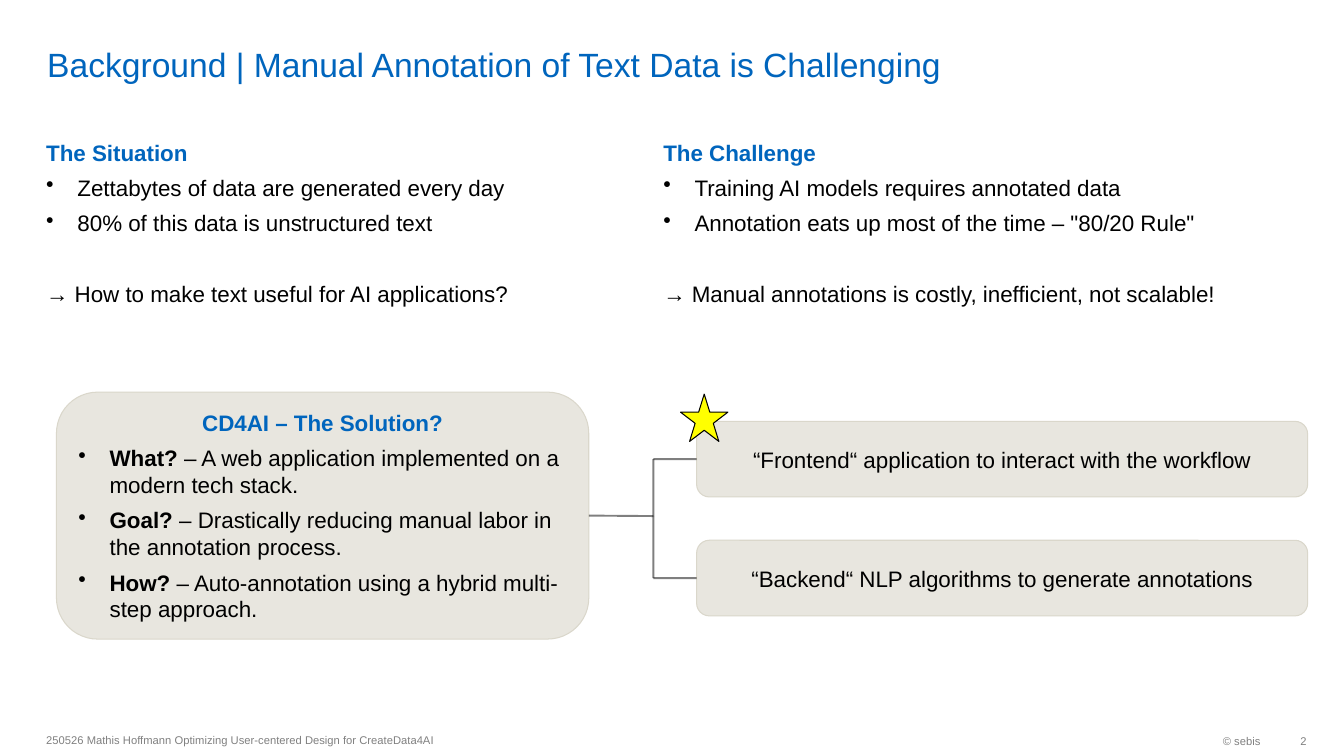
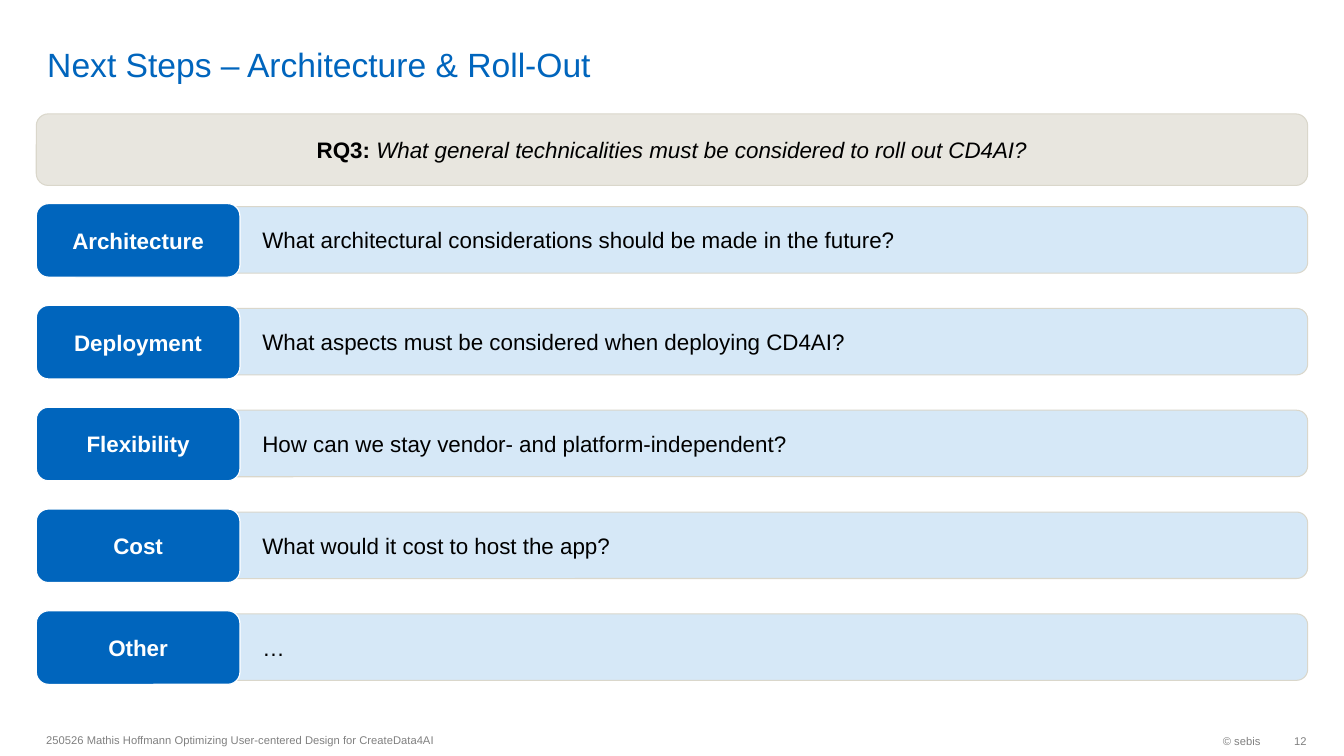
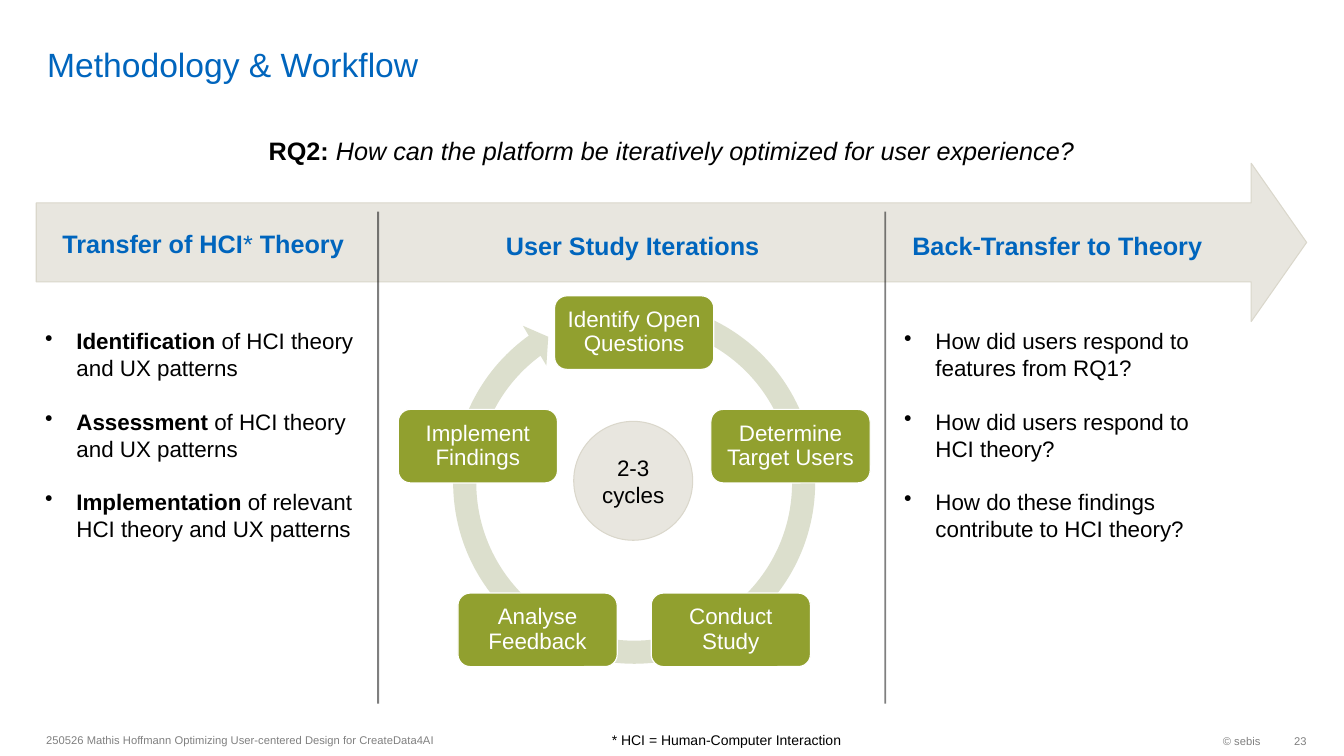
from dataclasses import dataclass
from math import cos, radians, sin

from lxml import etree
from pptx import Presentation
from pptx.dml.color import RGBColor
from pptx.enum.shapes import MSO_CONNECTOR, MSO_SHAPE
from pptx.enum.text import MSO_ANCHOR, PP_ALIGN
from pptx.oxml.ns import qn
from pptx.util import Inches, Pt

ROUNDED = MSO_SHAPE.ROUNDED_RECTANGLE
TOP, MIDDLE, BOTTOM = MSO_ANCHOR.TOP, MSO_ANCHOR.MIDDLE, MSO_ANCHOR.BOTTOM
LEFT, CENTER, RIGHT = PP_ALIGN.LEFT, PP_ALIGN.CENTER, PP_ALIGN.RIGHT


@dataclass(frozen=True)
class Theme:
    font: str = "Arial"
    blue: str = "0065BD"
    pale_blue: str = "D6E8F7"
    sand: str = "E8E6DF"
    sand_edge: str = "DAD7CB"
    olive: str = "91A02F"
    pale_olive: str = "DCDFCD"
    yellow: str = "FFFF00"
    black: str = "000000"
    white: str = "FFFFFF"
    gray: str = "808080"
    title: int = 24
    heading: int = 18
    body: int = 16
    note: int = 10
    footer: int = 8


theme = Theme()
BOLD = {"bold": True}
ITALIC = {"italic": True}
BLUE_BOLD = {"bold": True, "color": theme.blue}
INSETS = (0.1, 0.05, 0.1, 0.05)
EDGE = (theme.sand_edge, 0.75)
WHITE_EDGE = (theme.white, 0.85)


def add_box(slide, at, paragraphs=(), kind=None, fill=None, line=None, size=theme.body,
            color=theme.black, align=LEFT, anchor=TOP, insets=INSETS, wrap=True):
    """Add a text box, or a shape of the given kind.

    A paragraph is (runs, formats); a run is (text, font styles).
    """
    place = [Inches(length) for length in at]
    if kind is None:
        shape = slide.shapes.add_textbox(*place)
    else:
        shape = slide.shapes.add_shape(kind, *place)
        shape.shadow.inherit = False
        shape.fill.solid()
        shape.fill.fore_color.rgb = RGBColor.from_string(fill)
        if line:
            shape.line.color.rgb = RGBColor.from_string(line[0])
            shape.line.width = Pt(line[1])
        else:
            shape.line.fill.background()

    frame = shape.text_frame
    frame.word_wrap = wrap
    frame.vertical_anchor = anchor
    for side, inset in zip(("left", "top", "right", "bottom"), insets):
        setattr(frame, f"margin_{side}", Inches(inset))

    for index, (runs, formats) in enumerate(paragraphs):
        paragraph = frame.paragraphs[0] if index == 0 else frame.add_paragraph()
        formats = {"alignment": align, **formats}
        if formats.pop("bullet", False):
            properties = paragraph._p.get_or_add_pPr()
            properties.set("marL", str(Inches(0.31)))
            properties.set("indent", str(Inches(-0.31)))
            etree.SubElement(properties, qn("a:buChar")).set("char", "•")
        for name, value in formats.items():
            setattr(paragraph, name, value)
        for text, styles in runs:
            run = paragraph.add_run()
            run.text = text
            styles = {"name": theme.font, "size": Pt(size), "color": color, **styles}
            run.font.color.rgb = RGBColor.from_string(styles.pop("color"))
            for name, value in styles.items():
                setattr(run.font, name, value)
    return shape


def add_rule(slide, start, end):
    """Add a half-transparent straight line."""
    rule = slide.shapes.add_connector(
        MSO_CONNECTOR.STRAIGHT, *[Inches(length) for length in (*start, *end)])
    rule.line.color.rgb = RGBColor.from_string(theme.black)
    rule.line.width = Pt(1.35)
    color = rule.line._get_or_add_ln().find(".//" + qn("a:srgbClr"))
    etree.SubElement(color, qn("a:alpha")).set("val", "50000")
    etree.SubElement(rule._element.spPr, qn("a:effectLst"))
    return rule


presentation = Presentation()
presentation.slide_width = Inches(13.33)
presentation.slide_height = Inches(7.5)

# Titles and footers shared by all slides
slides = []
for title, number in (
    ("Background | Manual Annotation of Text Data is Challenging", "2"),
    ("Next Steps – Architecture & Roll-Out", "12"),
    ("Methodology & Workflow", "23"),
):
    slide = presentation.slides.add_slide(presentation.slide_layouts[6])
    add_box(slide, (0.37, 0.05, 11.58, 0.79), [([(title, {})], {})], size=theme.title,
            color=theme.blue, anchor=BOTTOM, insets=(0.1, 0, 0.1, 0))
    for text, at, align, insets in (
        ("250526 Mathis Hoffmann Optimizing User-centered Design for CreateData4AI",
         (0.36, 7.18, 6.3, 0.32), LEFT, INSETS),
        ("© sebis", (10.26, 7.19, 2.34, 0.32), RIGHT, INSETS),
        (number, (12.6, 7.19, 0.36, 0.32), RIGHT, (0.1, 0.05, 0, 0.05)),
    ):
        add_box(slide, at, [([(text, {})], {})], size=theme.footer, color=theme.gray,
                align=align, anchor=MIDDLE, insets=insets)
    slides.append(slide)
background, next_steps, methodology = slides

# Background: situation and challenge
spaced = {"space_before": Pt(6)}
spaced_bullet = {"bullet": True, **spaced}
for left, width, heading, facts, conclusion in (
    (0.36, 5.83, "The Situation",
     ("Zettabytes of data are generated every day",
      "80%\u00a0of this data is unstructured text".replace("\u00a0", " ")),
     "→ How to make text useful for AI applications?"),
    (6.48, 6.48, "The Challenge",
     ("Training AI models requires annotated data",
      "Annotation eats up most of the time – \"80/20 Rule\""),
     "→ Manual annotations is costly, inefficient, not scalable!"),
):
    add_box(background, (left, 1.33, width, 1.78), [
        ([(heading, BLUE_BOLD)], {}),
        *[([(fact, {})], spaced_bullet) for fact in facts],
        ([(conclusion, {})], {"space_before": Pt(31)}),
    ])

# Background: solution and its two parts
solution = add_box(background, (0.56, 3.89, 5.28, 2.45), [
    ([("CD4AI – The Solution?", BLUE_BOLD)], {"alignment": CENTER}),
    *[([(question, BOLD), (answer, {})], spaced_bullet) for question, answer in (
        ("What? ", "– A web application implemented on a modern tech stack."),
        ("Goal? ", "– Drastically reducing manual labor in the annotation process."),
        ("How? ", "– Auto-annotation using a hybrid multi-step approach."),
    )],
], ROUNDED, theme.sand, EDGE)

spine, hub = 6.48, 5.12
trunk = add_rule(background, (5.84, hub), (spine, hub))
trunk.begin_connect(solution, 3)
for top, text in (
    (4.18, "“Frontend“ application to interact with the workflow"),
    (5.36, "“Backend“ NLP algorithms to generate annotations"),
):
    part = add_box(background, (6.91, top, 6.06, 0.75), [([(text, {})], {})],
                   ROUNDED, theme.sand, EDGE, align=CENTER, anchor=MIDDLE)
    middle = top + 0.75 / 2
    add_rule(background, (spine, hub), (spine, middle))
    branch = add_rule(background, (spine, middle), (6.91, middle))
    branch.end_connect(part, 1)
add_box(background, (6.75, 3.91, 0.47, 0.47), kind=MSO_SHAPE.STAR_5_POINT,
        fill=theme.yellow, line=(theme.black, 0.75))

# Next steps: research question and topic rows
add_box(next_steps, (0.36, 1.13, 12.61, 0.71), [
    ([("RQ3: ", BOLD),
      ("What general technicalities must be considered to roll out CD4AI?", ITALIC)], {}),
], ROUNDED, theme.sand, EDGE, align=CENTER, anchor=MIDDLE)
for row, (topic, question) in enumerate((
    ("Architecture", "What architectural considerations should be made in the future?"),
    ("Deployment", "What aspects must be considered when deploying CD4AI?"),
    ("Flexibility", "How can we stay vendor- and platform-independent?"),
    ("Cost", "What would it cost to host the app?"),
    ("Other", "…"),
)):
    top = 2.02 + 1.01 * row
    add_box(next_steps, (2.18, top + 0.03, 10.79, 0.66), [([(question, {})], {})],
            ROUNDED, theme.pale_blue, EDGE, anchor=MIDDLE, insets=(0.39, 0.05, 0.1, 0.05))
    add_box(next_steps, (0.36, top, 2.02, 0.73), [([(topic, BOLD)], {})],
            ROUNDED, theme.blue, WHITE_EDGE, color=theme.white, align=CENTER, anchor=MIDDLE)

# Methodology: arrow band, research question and phase headings
band = add_box(methodology, (0.36, 1.62, 12.6, 1.57), kind=MSO_SHAPE.RIGHT_ARROW,
               fill=theme.sand, line=EDGE)
band.adjustments[1] = 0.35
add_box(methodology, (0.36, 1.29, 12.6, 0.4), [
    ([("RQ2: ", BOLD),
      ("How can the platform be iteratively optimized for user experience?", ITALIC)], {}),
], size=theme.heading, align=CENTER)
for at, runs in (
    ((0.52, 2.22, 3.02, 0.4), [("Transfer of HCI", BOLD), ("*", {}), (" Theory", BOLD)]),
    ((4.92, 2.24, 2.74, 0.4), [("User Study Iterations", BOLD)]),
    ((8.95, 2.24, 3.11, 0.4), [("Back-Transfer to Theory", BOLD)]),
):
    add_box(methodology, at, [(runs, {})], size=theme.heading, color=theme.blue, wrap=False)
for divider in (3.75, 8.78):
    add_rule(methodology, (divider, 2.1), (divider, 6.98))

# Methodology: outer columns
for left, points in (
    (0.35, (("Identification", " of HCI theory and UX patterns"),
            ("Assessment", " of HCI theory and UX patterns"),
            ("Implementation", " of relevant HCI theory and UX patterns"))),
    (8.87, (("", "How did users respond to features from RQ1?"),
            ("", "How did users respond to HCI theory?"),
            ("", "How do these findings contribute to HCI theory?"))),
):
    add_box(methodology, (left, 3.2, 3.27, 2.26), [
        ([(text, style) for text, style in ((lead, BOLD), (rest, {})) if text],
         {"bullet": True, "space_before": Pt(19 if index else 0)})
        for index, (lead, rest) in enumerate(points)
    ])

# Methodology: study cycle, clockwise from the top
cycle = add_box(methodology, (4.38, 2.88, 3.82, 3.82), kind=MSO_SHAPE.CIRCULAR_ARROW,
                fill=theme.pale_olive)
for index, value in enumerate((0.06, 3.31, 140.42, 172.26, 0.06)):
    cycle.adjustments[index] = value
steps = ("Identify Open Questions", "Determine Target Users", "Conduct Study",
         "Analyse Feedback", "Implement Findings")
for index, step in enumerate(steps):
    angle = radians(360 / len(steps) * index)
    left = 6.29 + 1.63 * sin(angle) - 1.58 / 2
    top = 4.93 - 1.63 * cos(angle) - 0.73 / 2
    add_box(methodology, (left, top, 1.58, 0.73), [([(step, {})], {"line_spacing": 0.9})],
            ROUNDED, theme.olive, WHITE_EDGE, color=theme.white, align=CENTER,
            anchor=MIDDLE, insets=(0.07, 0.07, 0.07, 0.07))
add_box(methodology, (5.69, 4.18, 1.18, 1.18), [([("2-3 cycles", {})], {})],
        MSO_SHAPE.OVAL, theme.sand, EDGE, align=CENTER, anchor=MIDDLE)
add_box(methodology, (5.97, 7.21, 2.5, 0.27),
        [([("* HCI = Human-Computer Interaction", {})], {})], size=theme.note, wrap=False)

presentation.save("out.pptx")
